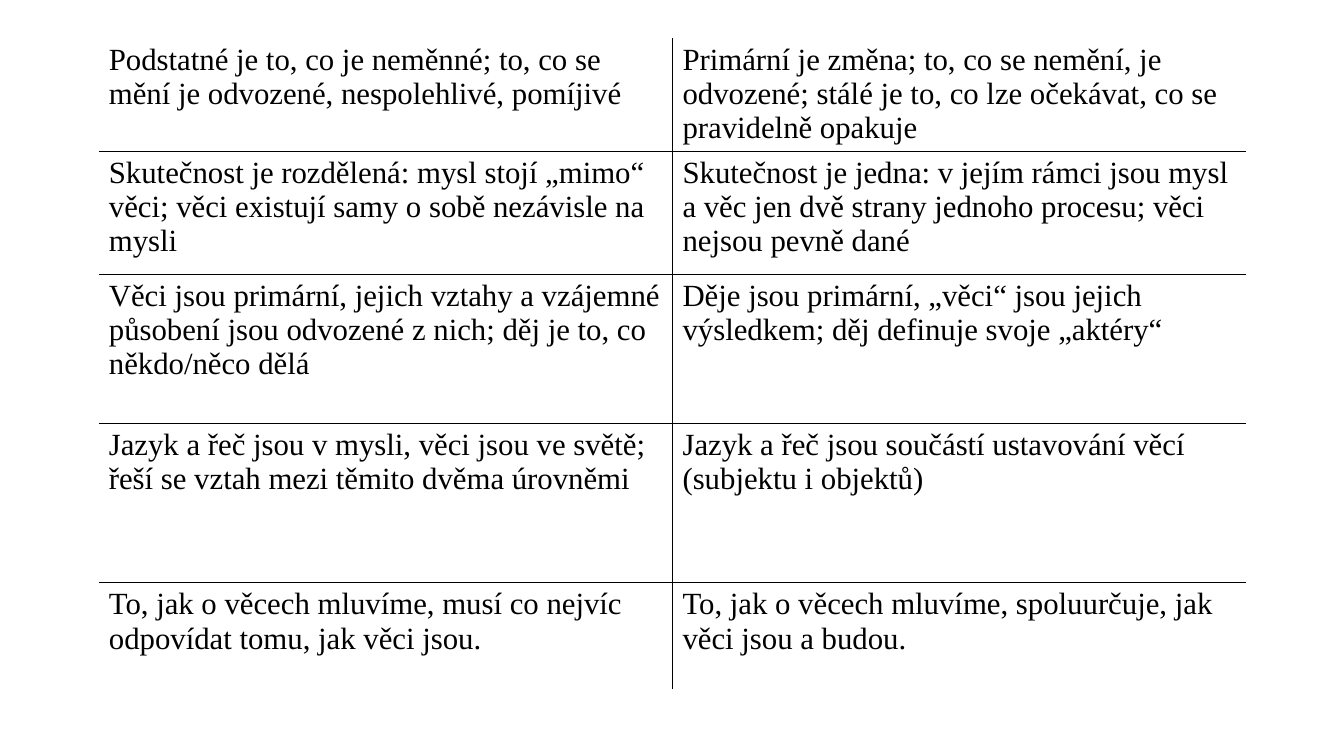
from lxml import etree
from pptx import Presentation
from pptx.dml.color import RGBColor
from pptx.oxml.ns import qn
from pptx.util import Inches, Pt

BLACK = RGBColor(0, 0, 0)
FONT = "Times New Roman"
BLANK_LAYOUT = 6
COLUMN_WIDTH = 5.69
ROW_HEIGHTS = [1.12, 1.22, 1.48, 1.58, 1.06]
CONTRASTS = [
    ("Podstatné je to, co je neměnné; to, co se mění je odvozené, nespolehlivé, pomíjivé",
     "Primární je změna; to, co se nemění, je odvozené; stálé je to, co lze očekávat, "
     "co se pravidelně opakuje"),
    ("Skutečnost je rozdělená: mysl stojí „mimo“ věci; věci existují samy o sobě "
     "nezávisle na mysli",
     "Skutečnost je jedna: v jejím rámci jsou mysl a věc jen dvě strany jednoho procesu; "
     "věci nejsou pevně dané"),
    ("Věci jsou primární, jejich vztahy a vzájemné působení jsou odvozené z nich; "
     "děj je to, co někdo/něco dělá",
     "Děje jsou primární, „věci“ jsou jejich výsledkem; děj definuje svoje „aktéry“"),
    ("Jazyk a řeč jsou v mysli, věci jsou ve světě; řeší se vztah mezi těmito dvěma úrovněmi",
     "Jazyk a řeč jsou součástí ustavování věcí (subjektu i objektů)"),
    ("To, jak o věcech mluvíme, musí co nejvíc odpovídat tomu, jak věci jsou.",
     "To, jak o věcech mluvíme, spoluurčuje, jak věci jsou a budou."),
]


def write_text(tf, text, size=22, color=BLACK, font=FONT):
    r = tf.paragraphs[0].add_run()
    r.text = text
    r.font.size = Pt(size)
    r.font.name = font
    r.font.color.rgb = color


def set_borders(cell, sides, width=1, color=BLACK):
    """Draw the named sides (of L, R, T, B) and hide the others."""
    tcPr = cell._tc.get_or_add_tcPr()
    for side in "LRTB":
        ln = etree.SubElement(tcPr, qn(f"a:ln{side}"), w=str(Pt(width)))
        if side in sides:
            fill = etree.SubElement(ln, qn("a:solidFill"))
            etree.SubElement(fill, qn("a:srgbClr"), val=str(color))
        else:
            etree.SubElement(ln, qn("a:noFill"))


def inner_sides(row, column, last_row):
    sides = "R" if column == 0 else "L"
    if row > 0:
        sides += "T"
    if row < last_row:
        sides += "B"
    return sides


def add_contrast_table(slide, left, top):
    frame = slide.shapes.add_table(
        len(CONTRASTS), 2, Inches(left), Inches(top),
        Inches(2 * COLUMN_WIDTH), Inches(sum(ROW_HEIGHTS)))
    table = frame.table
    table.first_row = False
    table.horz_banding = False
    for column in table.columns:
        column.width = Inches(COLUMN_WIDTH)
    for i, (height, texts) in enumerate(zip(ROW_HEIGHTS, CONTRASTS)):
        table.rows[i].height = Inches(height)
        for j, text in enumerate(texts):
            cell = table.cell(i, j)
            write_text(cell.text_frame, text)
            set_borders(cell, inner_sides(i, j, len(CONTRASTS) - 1))
            cell.fill.background()


def main():
    prs = Presentation()
    prs.slide_width, prs.slide_height = Inches(13.33), Inches(7.5)
    slide = prs.slides.add_slide(prs.slide_layouts[BLANK_LAYOUT])
    add_contrast_table(slide, left=0.98, top=0.38)
    prs.save("out.pptx")


if __name__ == "__main__":
    main()
